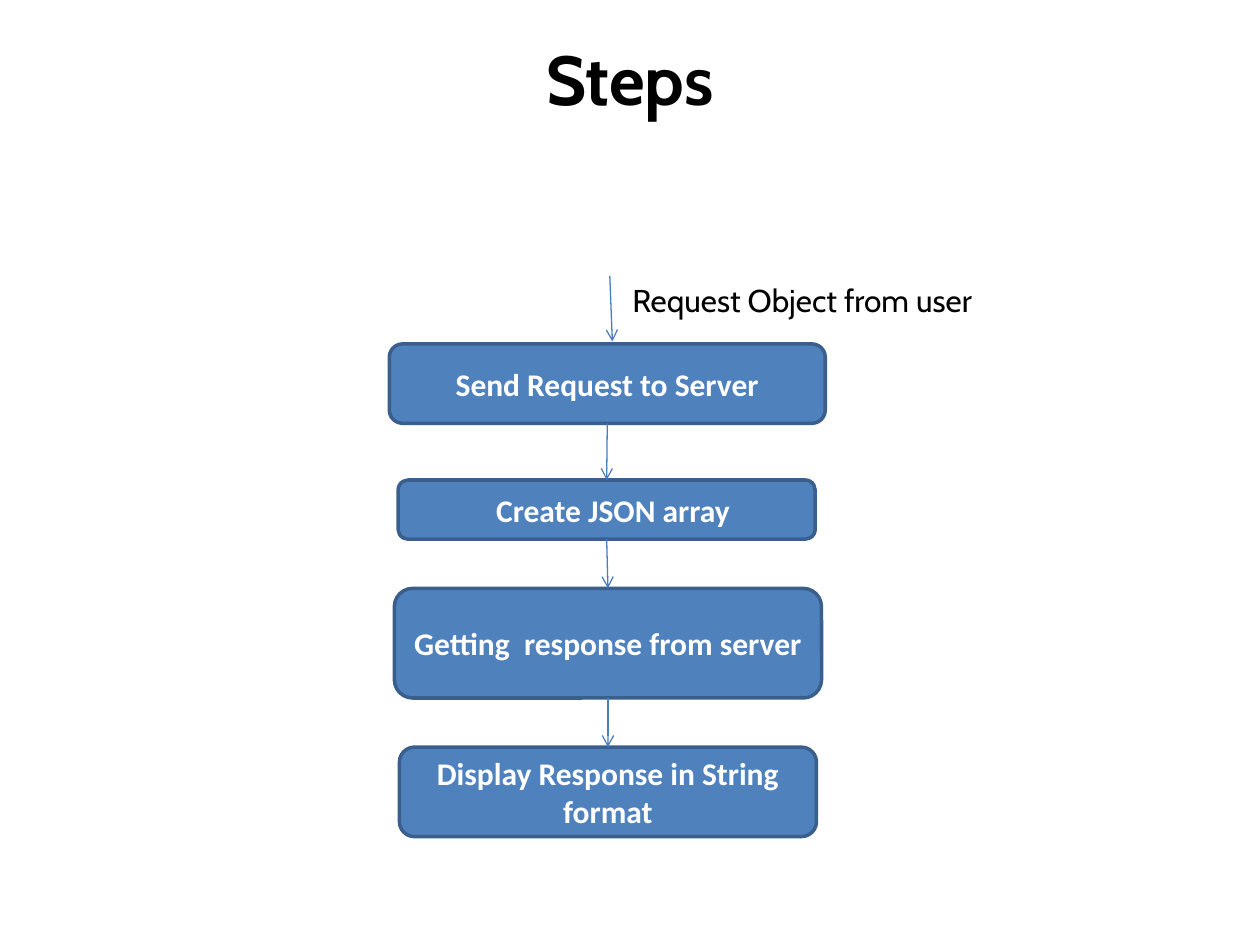
from dataclasses import dataclass

import pptx
import pptx.dml.color
import pptx.enum.shapes
import pptx.enum.text
import pptx.oxml
import pptx.oxml.ns
import pptx.util
from pptx.shapes.autoshape import Shape
from pptx.shapes.connector import Connector
from pptx.slide import Slide

COLORS = {"text": "000000", "label": "FFFFFF", "fill": "4F81BD",
          "border": "3A5F8C", "arrow": "4B7EBC"}
SHAPES = pptx.enum.shapes.MSO_SHAPE
ALIGN = pptx.enum.text.PP_ALIGN
ANCHOR = pptx.enum.text.MSO_ANCHOR
AUTO_SIZE = pptx.enum.text.MSO_AUTO_SIZE
TOP, BOTTOM = 0, 2
COLUMNS, ROWS = 100, 75
WIDTH, HEIGHT = pptx.util.Inches(10), pptx.util.Inches(7.5)


@dataclass
class Area:
    """A rectangle in grid columns and rows."""
    left: float
    top: float
    width: float
    height: float


@dataclass
class Step:
    text: str
    area: Area
    shape: SHAPES = SHAPES.ROUNDED_RECTANGLE
    indent: float = 0


STEPS = [
    Step("Send Request to Server", Area(30.9, 27.3, 34.6, 6.3)),
    Step("Create JSON array", Area(31.6, 38.1, 33.1, 4.7), indent=1),
    Step("Getting  response from server", Area(31.3, 46.7, 33.9, 8.7)),
    Step("Display Response in String format", Area(31.7, 59.3, 33.1, 7.1),
         SHAPES.FLOWCHART_ALTERNATE_PROCESS),
]


def across(columns: float) -> int:
    return round(WIDTH * columns / COLUMNS)


def down(rows: float) -> int:
    return round(HEIGHT * rows / ROWS)


def place(area: Area) -> tuple[int, int, int, int]:
    return across(area.left), down(area.top), across(area.width), down(area.height)


def color(name: str) -> pptx.dml.color.RGBColor:
    return pptx.dml.color.RGBColor.from_string(COLORS[name])


def write(box: Shape, text: str, font: str, size: float, color_name: str,
          bold: bool = False, align: ALIGN = ALIGN.CENTER,
          anchor: ANCHOR = ANCHOR.MIDDLE) -> None:
    frame = box.text_frame
    frame.text = text
    frame.word_wrap = True
    frame.auto_size = AUTO_SIZE.NONE
    frame.vertical_anchor = anchor
    para = frame.paragraphs[0]
    para.alignment = align
    span = para.runs[0]
    span.font.name = font
    span.font.size = pptx.util.Pt(size)
    span.font.bold = bold
    span.font.color.rgb = color(color_name)


def draw_step(page: Slide, step: Step) -> Shape:
    box = page.shapes.add_shape(step.shape, *place(step.area))
    box.shadow.inherit = False
    box.fill.solid()
    box.fill.fore_color.rgb = color("fill")
    box.line.color.rgb = color("border")
    box.line.width = pptx.util.Pt(2)
    write(box, step.text, "Calibri", 18, "label", bold=True)
    box.text_frame.margin_left += across(step.indent)
    return box


def draw_arrow(page: Slide, start: tuple[float, float] = (0, 0),
               end: tuple[float, float] = (0, 0)) -> Connector:
    arrow = page.shapes.add_connector(
        pptx.enum.shapes.MSO_CONNECTOR.STRAIGHT,
        across(start[0]), down(start[1]), across(end[0]), down(end[1]))
    arrow.line.color.rgb = color("arrow")
    arrow.line.width = pptx.util.Pt(0.75)
    head = pptx.oxml.parse_xml(
        f'<a:tailEnd {pptx.oxml.ns.nsdecls("a")} type="arrow"/>')
    arrow.line._get_or_add_ln().append(head)
    arrow._element.spPr.append(
        pptx.oxml.parse_xml(f'<a:effectLst {pptx.oxml.ns.nsdecls("a")}/>'))
    return arrow


def main() -> None:
    deck = pptx.Presentation()
    deck.slide_width, deck.slide_height = WIDTH, HEIGHT
    page = deck.slides.add_slide(deck.slide_layouts.get_by_name("Title Only"))

    # Title
    title = page.shapes.title
    title.left, title.top, title.width, title.height = place(Area(5, 3.4, 90, 5.5))
    write(title, "Steps", "Cabin", 39.6, "text", bold=True)

    # Steps, each joined to the next
    boxes = [draw_step(page, step) for step in STEPS]
    for upper, lower in zip(boxes, boxes[1:]):
        arrow = draw_arrow(page)
        arrow.begin_connect(upper, BOTTOM)
        arrow.end_connect(lower, TOP)

    # Incoming request
    draw_arrow(page, (48.4, 21.9), (48.6, 27.1))
    note = page.shapes.add_textbox(*place(Area(49.2, 21.8, 33.1, 7.1)))
    write(note, "Request Object from user", "Cabin", 18, "text",
          align=ALIGN.LEFT, anchor=ANCHOR.TOP)

    deck.save("out.pptx")


if __name__ == "__main__":
    main()
